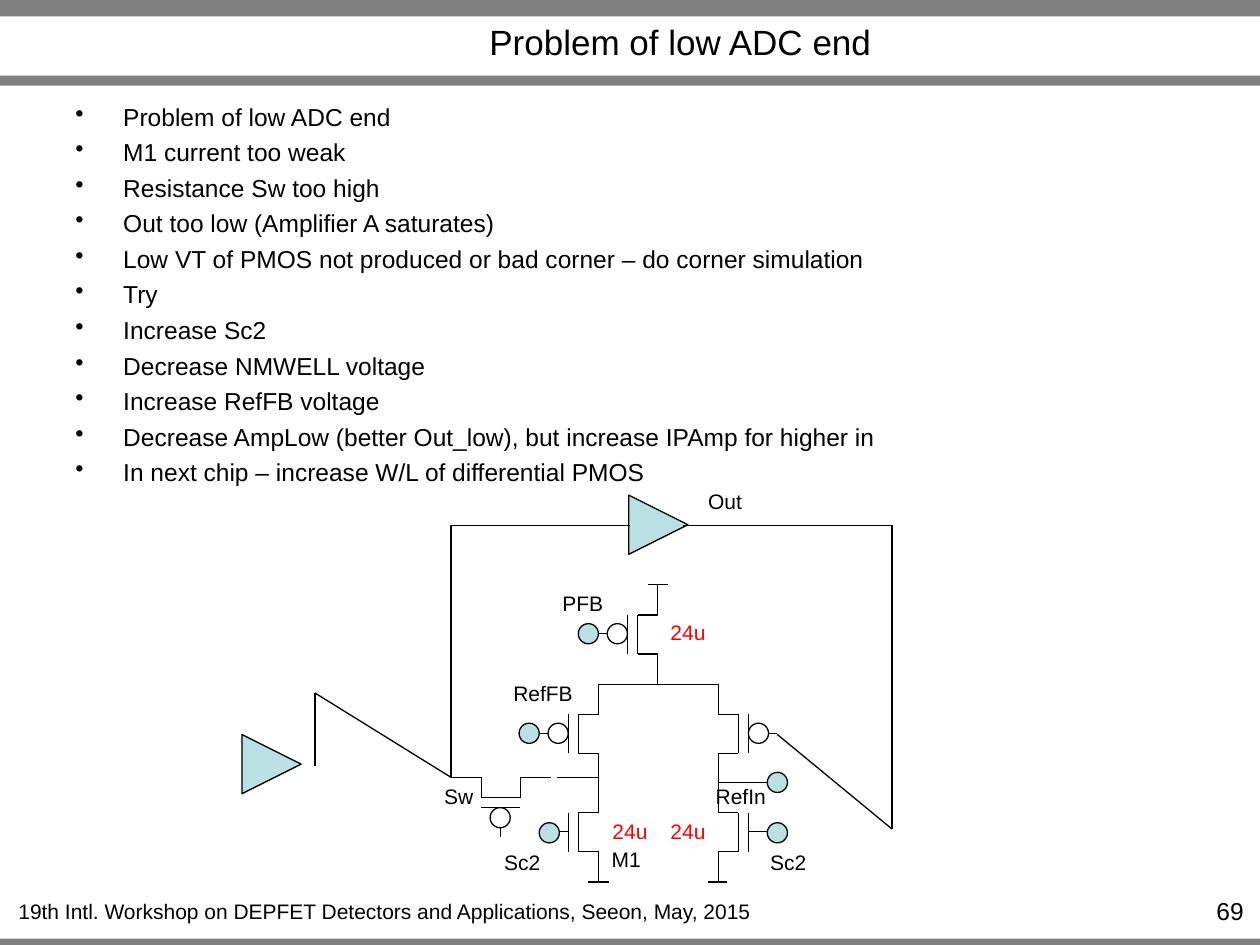
from lxml import etree
from pptx import Presentation, util as u
from pptx.dml.color import RGBColor
from pptx.enum import shapes, text
from pptx.oxml.ns import qn

Inches, Pt = u.Inches, u.Pt
PP = text.PP_ALIGN
theme = {
    "font": "Arial", "title": 20, "body": 14, "label": 12, "line": 0.75,
    "black": RGBColor(0, 0, 0), "white": RGBColor(255, 255, 255),
    "red": RGBColor(255, 0, 0), "gray": RGBColor(0x80, 0x80, 0x80),
    "teal": RGBColor(0xBB, 0xE0, 0xE3),
}

prs = Presentation()
prs.slide_width, prs.slide_height = Inches(10), Inches(7.5)
s = prs.slides.add_slide(prs.slide_layouts[6])


def add_text(lines, x, y, w, h, size="label", color="black", align=PP.CENTER,
             wrap=False, bullet=False):
    tf = s.shapes.add_textbox(Inches(x), Inches(y), Inches(w), Inches(h)).text_frame
    tf.word_wrap = wrap
    tf.text = "\n".join(lines)
    for i, p in enumerate(tf.paragraphs):
        p.alignment = align
        if bullet:
            p.space_before = Pt(3.5 if i else 0)
            pPr = p._p.get_or_add_pPr()
            pPr.set("marL", str(Inches(0.38)))
            pPr.set("indent", str(Inches(-0.38)))
            etree.SubElement(pPr, qn("a:buChar")).set("char", "•")
        for r in p.runs:
            r.font.name, r.font.size = theme["font"], Pt(theme[size])
            r.font.color.rgb = theme[color]
    return tf


def add_line(x1, y1, x2, y2):
    c = s.shapes.add_connector(shapes.MSO_CONNECTOR.STRAIGHT, Inches(x1), Inches(y1),
                               Inches(x2), Inches(y2))
    c.line.color.rgb, c.line.width = theme["black"], Pt(theme["line"])
    etree.SubElement(c._element.spPr, qn("a:effectLst"))


for y, h in [(7.45, 0.08), (0, 0.13), (0.6, 0.08)]:
    sp = s.shapes.add_shape(shapes.MSO_SHAPE.RECTANGLE, 0, Inches(y), Inches(10), Inches(h))
    sp.shadow.inherit = False
    sp.fill.solid()
    sp.fill.fore_color.rgb = theme["gray"]
    sp.line.fill.background()

add_text(["19th Intl. Workshop on DEPFET Detectors and Applications, Seeon, May, 2015"],
         0.02, 7.08, 6.07, 0.3)
add_text(["69"], 9.1, 7.06, 0.87, 0.24, "body", align=PP.RIGHT, wrap=True)
tf = add_text(["Problem of low ADC end"], 1.3, 0.14, 8.2, 0.38, "title", wrap=True)
tf.vertical_anchor = text.MSO_ANCHOR.MIDDLE
add_text([
    "Problem of low ADC end",
    "M1 current too weak",
    "Resistance Sw too high",
    "Out too low (Amplifier A saturates)",
    "Low VT of PMOS not produced or bad corner – do corner simulation",
    "Try",
    "Increase Sc2",
    "Decrease NMWELL voltage",
    "Increase RefFB voltage",
    "Decrease AmpLow (better Out_low), but increase IPAmp for higher in",
    "In next chip – increase W/L of differential PMOS",
], 0.5, 0.76, 9, 3.1, "body", align=PP.LEFT, wrap=True, bullet=True)

# Each segment runs (along, across) the channel, starting at the source terminal.
segments = [
    (0, 0, 0.24, 0), (0.24, 0, 0.24, 0.16), (0.55, 0, 0.55, 0.16),
    (0.24, 0.16, 0.55, 0.16), (0.24, 0.24, 0.55, 0.24), (0.55, 0, 0.79, 0),
    (0.39, 0.24, 0.39, 0.47),
]
down, right, left = (0, 1), (1, 0), (-1, 0)
transistors = [
    (5.22, 4.64, down, left, True),
    (4.75, 5.43, down, left, True),
    (5.7, 5.43, down, right, True),
    (4.75, 6.21, down, left, False),
    (5.7, 6.21, down, right, False),
    (3.58, 6.17, right, down, True),
]
circles = [(6.17, 6.61, "teal"), (4.36, 6.61, "teal"), (4.2, 5.82, "teal"),
           (4.67, 5.03, "teal"), (6.17, 6.21, "teal")]
for x, y, (ax, ay), (gx, gy), pmos in transistors:
    for a1, g1, a2, g2 in segments:
        add_line(x + a1 * ax + g1 * gx, y + a1 * ay + g1 * gy,
                 x + a2 * ax + g2 * gx, y + a2 * ay + g2 * gy)
    if pmos:
        circles.append((x + 0.39 * ax + 0.32 * gx, y + 0.39 * ay + 0.32 * gy, "white"))

oval, triangle = shapes.MSO_SHAPE.OVAL, shapes.MSO_SHAPE.ISOSCELES_TRIANGLE
symbols = [(oval, x - 0.08, y - 0.08, 0.16, 0, fill) for x, y, fill in circles]
symbols += [(triangle, x, y, 0.47, 90, "teal") for x, y in [(4.99, 3.93), (1.92, 5.83)]]
for kind, x, y, size, turn, fill in symbols:
    sp = s.shapes.add_shape(kind, Inches(x), Inches(y), Inches(size), Inches(size))
    sp.shadow.inherit = False
    sp.rotation = turn
    sp.fill.solid()
    sp.fill.fore_color.rgb = theme[fill]
    sp.line.color.rgb, sp.line.width = theme["black"], Pt(theme["line"])

wires = [
    (4.75, 5.43, 5.7, 5.43), (4.67, 7, 4.83, 7), (5.62, 7, 5.77, 7),
    (5.14, 4.64, 5.3, 4.64), (7.08, 4.17, 7.08, 6.58), (6.17, 5.83, 7.08, 6.58),
    (6.09, 6.21, 5.7, 6.21), (5, 4.17, 3.58, 4.17), (2.5, 5.5, 3.58, 6.17),
    (7.08, 4.17, 5.42, 4.17), (4.75, 6.17, 4.42, 6.17), (2.5, 5.5, 2.5, 6.08),
    (3.58, 4.17, 3.58, 6.17),
]
for wire in wires:
    add_line(*wire)

labels = [
    ("PFB", 4.36, 4.64, 0.53, "black"), ("RefFB", 3.97, 5.35, 0.68, "black"),
    ("Sc2", 3.9, 6.69, 0.49, "black"), ("Sc2", 6.01, 6.69, 0.49, "black"),
    ("RefIn", 5.58, 6.17, 0.6, "black"), ("24u", 4.76, 6.45, 0.48, "red"),
    ("24u", 5.22, 6.45, 0.48, "red"), ("24u", 5.22, 4.87, 0.48, "red"),
    ("M1", 4.75, 6.67, 0.44, "black"), ("Sw", 3.42, 6.17, 0.44, "black"),
    ("Out", 5.52, 3.83, 0.47, "black"),
]
for label, x, y, w, color in labels:
    add_text([label], x, y, w, 0.3, color=color)

prs.save("out.pptx")
